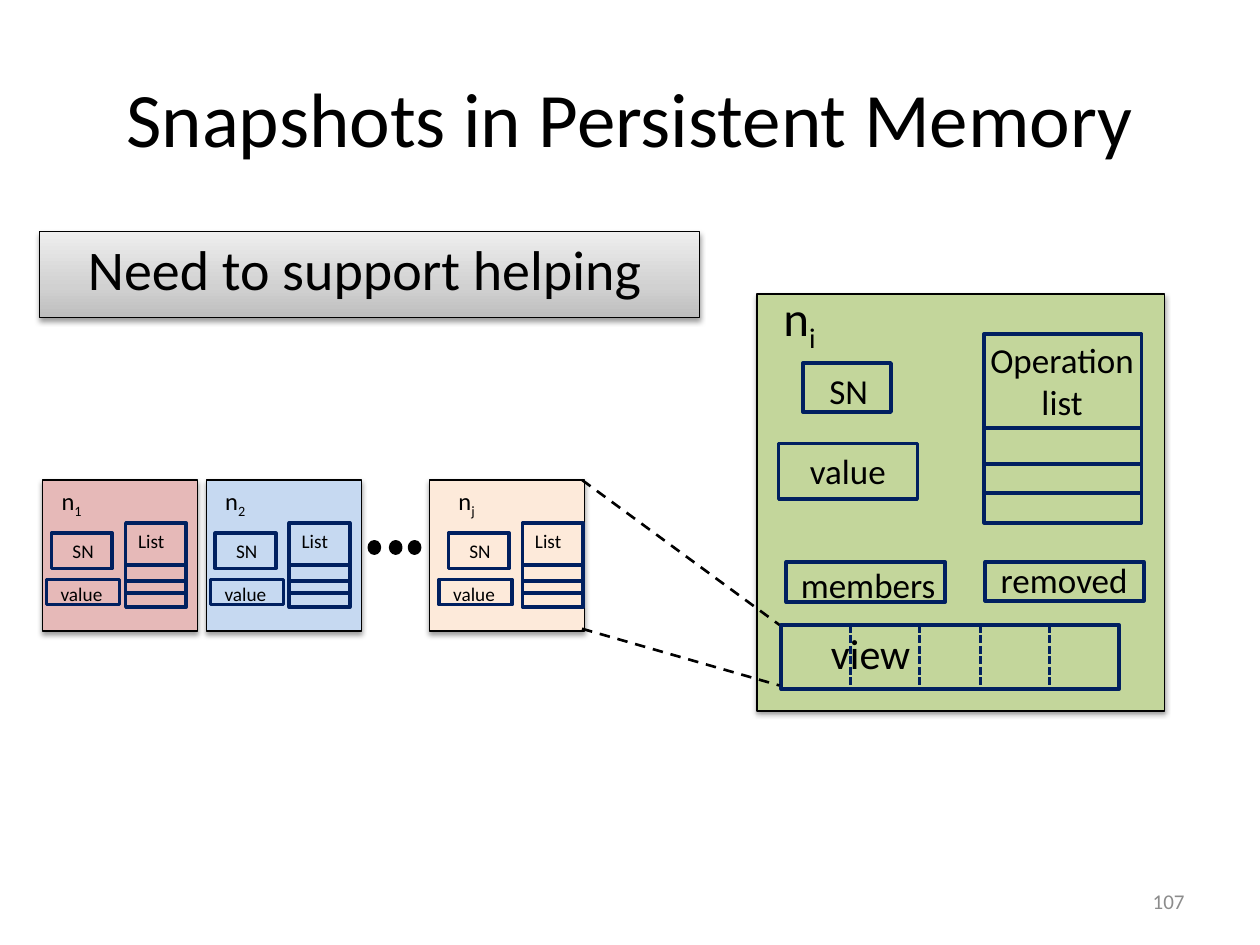
from copy import deepcopy

from lxml.etree import SubElement
from pptx import Presentation
from pptx.dml.color import RGBColor
from pptx.enum.dml import MSO_LINE
from pptx.enum.shapes import MSO_CONNECTOR, MSO_SHAPE
from pptx.enum.text import MSO_ANCHOR, PP_ALIGN
from pptx.oxml.ns import qn
from pptx.util import Pt

COLORS = {
    "black": "000000", "navy": "002060", "gray": "8C8C8C",
    "green": "C3D69B", "rose": "E6B9B8", "blue": "C6D9F1", "peach": "FDEADA",
    "banner_dark": "BDBDBD", "banner_mid": "D1D1D1", "banner_light": "EEEEEE",
}
RGB = {name: RGBColor.from_string(value) for name, value in COLORS.items()}
FONT = "Calibri"

prs = Presentation()
prs.slide_width, prs.slide_height = Pt(720), Pt(540)
slide = prs.slides.add_slide(prs.slide_layouts[5])
shapes = slide.shapes


def add_box(left, top, width, height, fill=None, line="navy", weight=2, kind=MSO_SHAPE.RECTANGLE):
    box = shapes.add_shape(kind, Pt(left), Pt(top), Pt(width), Pt(height))
    box.shadow.inherit = False
    if fill:
        box.fill.solid()
        box.fill.fore_color.rgb = RGB[fill]
    else:
        box.fill.background()
    box.line.color.rgb = RGB[line]
    box.line.width = Pt(weight)
    return box


def add_label(text, left, top, width, height, size, align=PP_ALIGN.CENTER, sub="", color="black"):
    label = shapes.add_textbox(Pt(left), Pt(top), Pt(width), Pt(height))
    label.text_frame.word_wrap = True
    paragraph = label.text_frame.paragraphs[0]
    paragraph.alignment = align
    paragraph.font.size = Pt(size)
    paragraph.font.name = FONT
    paragraph.font.color.rgb = RGB[color]
    paragraph.add_run().text = text
    if sub:
        subscript = paragraph.add_run()
        subscript.text = sub
        subscript._r.get_or_add_rPr().set("baseline", "-25000")
    return label


title = shapes.title
title.left, title.top, title.width, title.height = Pt(36), Pt(21.6), Pt(648), Pt(90)
title.text_frame.text = "Snapshots in Persistent Memory"
title.text_frame.vertical_anchor = MSO_ANCHOR.MIDDLE
heading = title.text_frame.paragraphs[0]
heading.alignment = PP_ALIGN.CENTER
heading.font.size = Pt(44)
heading.font.name = FONT
heading.font.color.rgb = RGB["black"]

page_number = add_label("107", 516, 500.5, 168, 28.8, 12, PP_ALIGN.RIGHT, color="gray")
page_number.text_frame.vertical_anchor = MSO_ANCHOR.MIDDLE

banner = add_box(22.5, 132.3, 377.3, 49.2, line="black", weight=0.75)
banner.fill.gradient()
banner.fill.gradient_angle = 90
stop_list = banner._element.spPr.find(".//" + qn("a:gsLst"))
stop_list.insert(1, deepcopy(stop_list[0]))
banner_stops = [(0, "banner_dark"), (0.35, "banner_mid"), (1, "banner_light")]
for stop, (position, color) in zip(banner.fill.gradient_stops, banner_stops):
    stop.position = position
    stop.color.rgb = RGB[color]
add_label("Need to support helping", 5.8, 130.3, 405.4, 46, 32)
shadowed = [banner]

detail = add_box(432.5, 168, 232.8, 238.3, "green", "black", 0.75)
shadowed.append(detail)
add_label("n", 440.6, 160.6, 62.6, 41, 28, PP_ALIGN.LEFT, sub="i")
for text, label_place, box_place in [
    ("SN", (456.5, 207.4, 57, 15), (458.8, 207.4, 50.4, 28.1)),
    ("value", (433.4, 253.4, 102.2, 31.7), (445, 253.4, 79.2, 31.7)),
    ("members", (445, 318.2, 102.2, 25.2), (449.3, 321.1, 90.7, 23)),
    ("removed", (557, 315.4, 102.2, 25.2), (563, 321.1, 90.7, 22.3)),
]:
    add_box(*box_place)
    add_label(text, *label_place, 20)
add_label("Operation list", 555.8, 190.1, 102.2, 55.4, 20)

view_left, view_top, view_height = 446.4, 357.1, 36.7
add_box(view_left, view_top, 193, view_height)
add_label("view", view_left, 355, 102.2, 36, 24)

lists = [(add_box(562.3, 190.8, 90, 108), (264.9, 281.6))]

node_top = 274.3
for index, fill, left, inner, value_left in [
    ("1", "rose", 24.5, 24.5, 26.5),
    ("2", "blue", 118, 118, 120.2),
    ("j", "peach", 245.5, 251.3, 250.8),
]:
    shadowed.append(add_box(left, node_top, 88.6, 86.4, fill, "black", 0.75))
    add_label("n", inner + 3.6, node_top, 31.7, 24.5, 14, PP_ALIGN.LEFT, sub=index)
    add_box(inner + 5, 304.6, 34.6, 20.2)
    add_label("SN", inner + 3.6, 304.6, 38.9, 20.9, 11)
    add_box(value_left, 331.2, 41.8, 14.4)
    add_label("value", value_left - 4, 329, 48.2, 20.9, 11)
    lists.append((add_box(inner + 47.3, 298.8, 34.6, 48.2), (331.9, 339.1)))
    add_label("List", inner + 42.5, 298.8, 38.9, 20.9, 11)

for dot_left in (211, 223.2, 234):
    add_box(dot_left, 309.6, 5.8, 6.5, "black", "black", kind=MSO_SHAPE.OVAL)

lines = []
for list_box, row_tops in lists:
    start = list_box.left.pt
    end = start + list_box.width.pt
    middle = list_box.top.pt + list_box.height.pt / 2
    lines.append((start, middle, end, middle, "navy", 2.25, None, list_box))
    for row in row_tops:
        lines.append((start, row, end, row, "navy", 2.25, None, None))
for x in (486, 525.6, 560.2, 599.8):
    lines.append((x, view_top, x, view_top + view_height, "navy", 1.5, MSO_LINE.SQUARE_DOT, None))
for y, view_y in [(node_top, view_top), (359.3, 391.7)]:
    lines.append((332.6, y, 445.4, view_y, "black", 1.5, MSO_LINE.DASH, None))

for x1, y1, x2, y2, color, weight, dash, joined in lines:
    line = shapes.add_connector(MSO_CONNECTOR.STRAIGHT, Pt(x1), Pt(y1), Pt(x2), Pt(y2))
    if joined:
        line.begin_connect(joined, 1)
        line.end_connect(joined, 3)
    line.line.color.rgb = RGB[color]
    line.line.width = Pt(weight)
    if dash:
        line.line.dash_style = dash
    SubElement(line._element.spPr, qn("a:effectLst"))

for card in shadowed:
    effects = card._element.spPr.find(qn("a:effectLst"))
    shadow = SubElement(effects, qn("a:outerShdw"), blurRad="40000", dist="20000",
                        dir="5400000", rotWithShape="0")
    shade = SubElement(shadow, qn("a:srgbClr"), val=COLORS["black"])
    SubElement(shade, qn("a:alpha"), val="38000")

prs.save("out.pptx")
